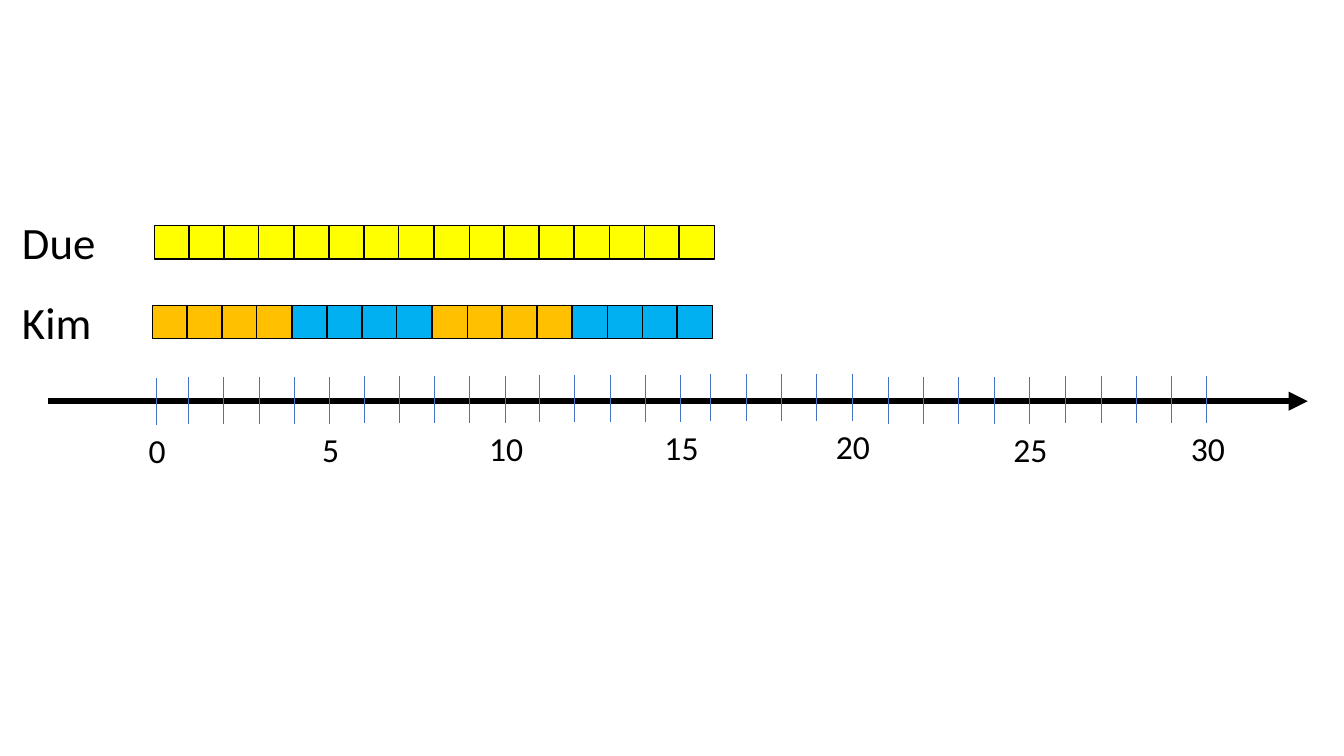
from dataclasses import dataclass

from lxml.etree import SubElement
from pptx import Presentation
from pptx.dml.color import RGBColor
from pptx.enum.shapes import MSO_CONNECTOR, MSO_SHAPE
from pptx.enum.text import PP_ALIGN
from pptx.oxml.ns import qn
from pptx.util import Inches, Pt


@dataclass(frozen=True)
class Theme:
    font: str = "Calibri"
    ink: str = "000000"
    tick: str = "4472C4"
    due: str = "FFFF00"
    kim: tuple = ("FFC000", "00B0F0")
    row_size: int = 32
    number_size: int = 24


theme = Theme()
deck = Presentation()
deck.slide_width, deck.slide_height = Inches(13.33), Inches(7.5)
slide = deck.slides.add_slide(deck.slide_layouts[6])


def add_line(x1, y1, x2, y2, color, width):
    line = slide.shapes.add_connector(
        MSO_CONNECTOR.STRAIGHT, Inches(x1), Inches(y1), Inches(x2), Inches(y2))
    line.line.color.rgb = RGBColor.from_string(color)
    line.line.width = Pt(width)
    SubElement(line._element.spPr, qn("a:effectLst"))
    return line


def add_label(text, x, y, width, height, size, align):
    label = slide.shapes.add_textbox(Inches(x), Inches(y), Inches(width), Inches(height))
    label.text_frame.word_wrap = True
    paragraph = label.text_frame.paragraphs[0]
    paragraph.text = text
    paragraph.alignment = align
    paragraph.font.name = theme.font
    paragraph.font.size = Pt(size)
    paragraph.font.color.rgb = RGBColor.from_string(theme.ink)


# Time axis
axis = add_line(0.48, 3.98, 12.97, 3.98, theme.ink, 4.5)
SubElement(axis.line._get_or_add_ln(), qn("a:tailEnd"), type="triangle")

# Each numbered tick closes a run of five; its place is (x, top)
tick_gap, tick_height = 0.35, 0.47
numbered_ticks = {
    0: (1.55, 3.75), 5: (3.27, 3.74), 10: (5.01, 3.73), 15: (6.75, 3.72),
    20: (8.45, 3.71), 25: (10.21, 3.74), 30: (11.97, 3.73),
}
for number, (x, top) in numbered_ticks.items():
    for back in range(5 if number else 1):
        tick_x = x - back * tick_gap
        add_line(tick_x, top, tick_x, top + tick_height, theme.tick, 0.5)
    add_label(str(number), x - 0.29, top + tick_height, 0.6, 0.5,
              theme.number_size, PP_ALIGN.CENTER)

# Work rows: four blocks of four unit cells, coloured in turn
blocks, cells_per_block = 4, 4
cell_gap, block_gap = 0.345, 1.39
cell_width, cell_height = Inches(0.35), Inches(0.33)
rows = [
    ("Due", 1.53, 2.24, (theme.due,)),
    ("Kim", 1.51, 3.03, theme.kim),
]
for name, left, top, colors in rows:
    add_label(name, 0.12, top - 0.16, 1.36, 0.64, theme.row_size, PP_ALIGN.LEFT)
    for block in range(blocks):
        for place in range(cells_per_block):
            x = left + block * block_gap + place * cell_gap
            cell = slide.shapes.add_shape(
                MSO_SHAPE.RECTANGLE, Inches(x), Inches(top), cell_width, cell_height)
            cell.shadow.inherit = False
            cell.fill.solid()
            cell.fill.fore_color.rgb = RGBColor.from_string(colors[block % len(colors)])
            cell.line.color.rgb = RGBColor.from_string(theme.ink)
            cell.line.width = Pt(1)

deck.save("out.pptx")
